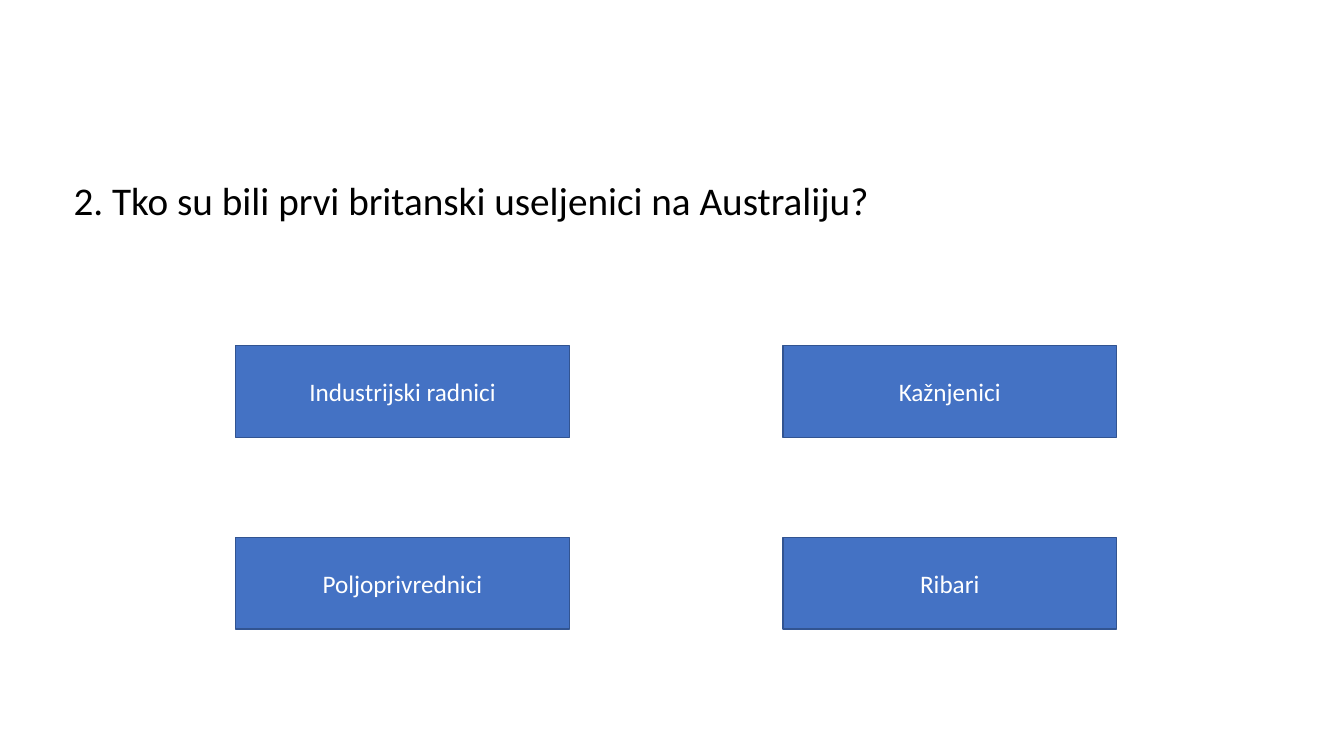
from pptx import Presentation
from pptx.dml.color import RGBColor
from pptx.enum.shapes import MSO_SHAPE
from pptx.enum.text import MSO_ANCHOR, MSO_AUTO_SIZE, PP_ALIGN
from pptx.util import Cm, Pt

RECTANGLE = MSO_SHAPE.RECTANGLE
TOP, MIDDLE = MSO_ANCHOR.TOP, MSO_ANCHOR.MIDDLE
LEFT, CENTER = PP_ALIGN.LEFT, PP_ALIGN.CENTER
NO_AUTOFIT = MSO_AUTO_SIZE.NONE
TITLE_ONLY_LAYOUT = 5

QUESTION = "2. Tko su bili prvi britanski useljenici na Australiju?"
ANSWERS = [
    ["Industrijski radnici", "Kažnjenici"],
    ["Poljoprivrednici", "Ribari"],
]
GRID_LEFT, GRID_TOP = 5.94, 8.71
COLUMN_STEP, ROW_STEP = 13.79, 4.83
ANSWER_WIDTH, ANSWER_HEIGHT = 8.41, 2.31


def color(value):
    return RGBColor.from_string(value)


def write_text(shape, text, size, text_color, alignment, anchor):
    frame = shape.text_frame
    frame.text = text
    frame.word_wrap = True
    frame.auto_size = NO_AUTOFIT
    frame.vertical_anchor = anchor
    paragraph = frame.paragraphs[0]
    paragraph.alignment = alignment
    paragraph.font.name = "Calibri"
    paragraph.font.size = Pt(size)
    paragraph.font.color.rgb = color(text_color)


def place_question(slide):
    title = slide.shapes.title
    title.left, title.top = Cm(1.6), Cm(4.32)
    title.width, title.height = Cm(30), Cm(1.45)
    write_text(title, QUESTION, 28, "000000", LEFT, TOP)


def add_answer(slide, text, left, top):
    shape = slide.shapes.add_shape(
        RECTANGLE, Cm(left), Cm(top), Cm(ANSWER_WIDTH), Cm(ANSWER_HEIGHT)
    )
    shape.shadow.inherit = False
    shape.fill.solid()
    shape.fill.fore_color.rgb = color("4472C4")
    shape.line.color.rgb = color("325491")
    shape.line.width = Pt(1)
    write_text(shape, text, 18, "FFFFFF", CENTER, MIDDLE)


def main():
    presentation = Presentation()
    presentation.slide_width = Cm(33.87)
    presentation.slide_height = Cm(19.05)
    layout = presentation.slide_layouts[TITLE_ONLY_LAYOUT]
    slide = presentation.slides.add_slide(layout)
    place_question(slide)
    for row, answers in enumerate(ANSWERS):
        for column, answer in enumerate(answers):
            left = GRID_LEFT + column * COLUMN_STEP
            top = GRID_TOP + row * ROW_STEP
            add_answer(slide, answer, left, top)
    presentation.save("out.pptx")


if __name__ == "__main__":
    main()
